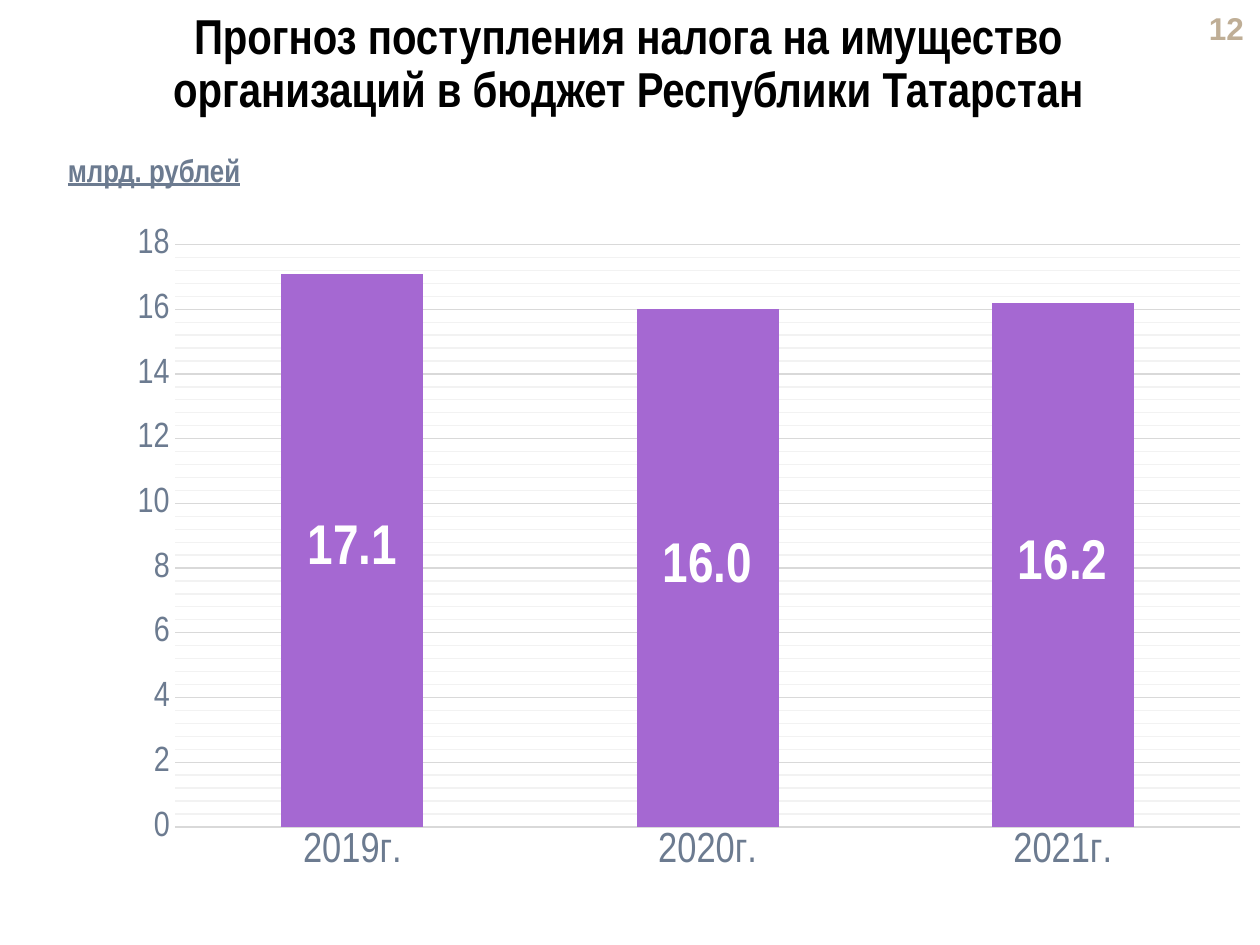
from lxml import etree
from pptx import Presentation
from pptx.chart.data import CategoryChartData
from pptx.dml.color import RGBColor
from pptx.enum.chart import XL_CHART_TYPE as ChartType
from pptx.enum.chart import XL_LABEL_POSITION as LabelPosition
from pptx.enum.chart import XL_TICK_MARK as TickMark
from pptx.enum.text import MSO_ANCHOR as Anchor
from pptx.enum.text import PP_ALIGN as Align
from pptx.oxml.ns import qn
from pptx.util import Inches, Pt


def color(value):
    return RGBColor.from_string(value)


class SlideBuilder:
    narrow = "Arial Narrow"
    slate = "6C7B90"
    grid = "D9D9D9"
    minor_grid = "F2F2F2"

    def __init__(self, slide):
        self.slide = slide

    def style(self, font, size, fill, name=narrow, bold=False):
        font.name = name
        font.size = Pt(size)
        font.bold = bold
        font.color.rgb = color(fill)

    def line(self, target, fill):
        target.format.line.color.rgb = color(fill)
        target.format.line.width = Pt(0.75)

    def minor_gridlines(self, axis, fill):
        axis.has_minor_gridlines = True
        element = axis._element.find(qn("c:minorGridlines"))
        for tag in ("c:spPr", "a:ln", "a:solidFill", "a:srgbClr"):
            element = etree.SubElement(element, qn(tag))
            if tag == "a:ln":
                element.set("w", str(Pt(0.75)))
        element.set("val", str(color(fill)))

    def text(self, box, content, size, fill, name=narrow, align=Align.LEFT,
             anchor=Anchor.TOP, spacing=1.0, underline=False):
        shape = self.slide.shapes.add_textbox(*map(Inches, box))
        frame = shape.text_frame
        frame.word_wrap = True
        frame.vertical_anchor = anchor
        paragraph = frame.paragraphs[0]
        paragraph.alignment = align
        paragraph.line_spacing = spacing
        run = paragraph.add_run()
        run.text = content
        self.style(run.font, size, fill, name, bold=True)
        run.font.underline = underline

    def plot_layout(self, chart, box):
        plot_area = chart._chartSpace.chart.plotArea
        for old in plot_area.findall(qn("c:layout")):
            plot_area.remove(old)
        layout = etree.Element(qn("c:layout"))
        manual = etree.SubElement(layout, qn("c:manualLayout"))
        settings = [("layoutTarget", "inner"), ("xMode", "edge"), ("yMode", "edge")]
        for tag, value in settings + list(zip("xywh", box)):
            etree.SubElement(manual, qn(f"c:{tag}")).set("val", str(value))
        plot_area.insert(0, layout)

    def column_chart(self, box, categories, values, fill, plot_box):
        data = CategoryChartData(number_format="0.0")
        data.categories = categories
        data.add_series("Series 1", values)
        chart = self.slide.shapes.add_chart(
            ChartType.COLUMN_STACKED, *map(Inches, box), data).chart
        chart.has_legend = False
        chart.has_title = False
        self.style(chart.font, 10, "000000", "Calibri")
        self.plot_layout(chart, plot_box)

        for axis, size in ((chart.category_axis, 24), (chart.value_axis, 20)):
            axis.major_tick_mark = TickMark.NONE
            axis.minor_tick_mark = TickMark.NONE
            self.style(axis.tick_labels.font, size, self.slate)
        self.line(chart.category_axis, self.grid)

        axis = chart.value_axis
        axis.minimum_scale, axis.maximum_scale = 0, 18
        axis.major_unit, axis.minor_unit = 2, 0.4
        axis.tick_labels.number_format = "0"
        axis.tick_labels.number_format_is_linked = False
        axis.format.line.fill.background()
        axis.has_major_gridlines = True
        self.line(axis.major_gridlines, self.grid)
        self.minor_gridlines(axis, self.minor_grid)

        plot = chart.plots[0]
        plot.gap_width = 150
        plot.overlap = 100
        plot.vary_by_categories = False
        series = plot.series[0]
        series.format.fill.solid()
        series.format.fill.fore_color.rgb = color(fill)
        labels = series.data_labels
        labels.show_value = True
        labels.position = LabelPosition.CENTER
        labels.number_format = "0.0"
        labels.number_format_is_linked = False
        self.style(labels.font, 32, "FFFFFF", bold=True)


def main():
    presentation = Presentation()
    presentation.slide_width = Inches(10)
    presentation.slide_height = Inches(7.5)
    builder = SlideBuilder(presentation.slides.add_slide(presentation.slide_layouts[6]))

    builder.text((9.33, 0.05, 0.64, 0.34), "12", 18, "BFAE96", name="Arial",
                 align=Align.RIGHT, anchor=Anchor.MIDDLE)
    builder.text((0.56, 0.05, 8.85, 0.63),
                 "Прогноз поступления налога на имущество организаций "
                 "в бюджет Республики Татарстан",
                 28, "000000", align=Align.CENTER, spacing=0.9)
    builder.column_chart((0.44, 1.75, 9.48, 5.47),
                         ("2019г.", "2020г.", "2021г."), (17.1, 16.0, 16.2),
                         "A568D2", (0.1, 0.035, 0.892, 0.845))
    builder.text((0.44, 1.15, 1.92, 0.4), "млрд. рублей", 18, builder.slate,
                 underline=True)
    presentation.save("out.pptx")


if __name__ == "__main__":
    main()
